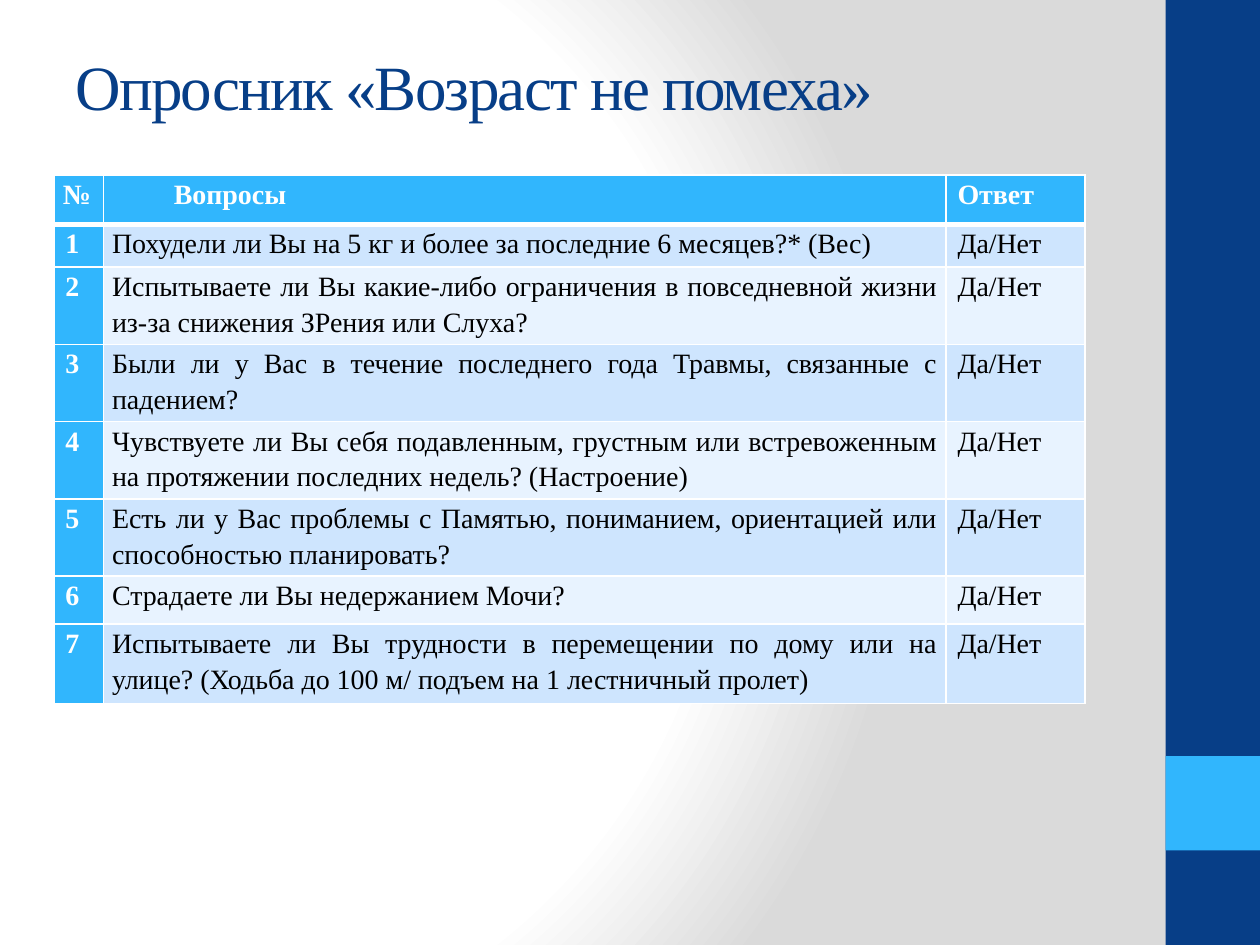
from lxml.etree import SubElement
from pptx import Presentation
from pptx.dml.color import RGBColor
from pptx.enum.shapes import MSO_SHAPE
from pptx.enum.text import MSO_ANCHOR, PP_ALIGN
from pptx.oxml import parse_xml
from pptx.oxml.ns import nsdecls, qn
from pptx.util import Inches, Pt

NAVY = RGBColor(0x07, 0x3E, 0x87)
SKY = RGBColor(0x31, 0xB6, 0xFD)
BAND_DARK = RGBColor(0xCE, 0xE5, 0xFE)
BAND_LIGHT = RGBColor(0xE8, 0xF3, 0xFF)
GREY = RGBColor(0xDA, 0xDA, 0xDA)
WHITE = RGBColor(0xFF, 0xFF, 0xFF)
BLACK = RGBColor(0, 0, 0)

HEADER = ["№", "Вопросы", "Ответ"]
ANSWER = "Да/Нет"
QUESTIONS = [
    "Похудели ли Вы на 5 кг и более за последние 6 месяцев?* (Вес)",
    "Испытываете ли Вы какие-либо ограничения в повседневной жизни "
    "из-за снижения ЗРения или Слуха?",
    "Были ли у Вас в течение последнего года Травмы, связанные с падением?",
    "Чувствуете ли Вы себя подавленным, грустным или встревоженным "
    "на протяжении последних недель? (Настроение)",
    "Есть ли у Вас проблемы с Памятью, пониманием, ориентацией "
    "или способностью планировать?",
    "Страдаете ли Вы недержанием Мочи?",
    "Испытываете ли Вы трудности в перемещении по дому или на улице? "
    "(Ходьба до 100 м/ подъем на 1 лестничный пролет)",
]
COL_WIDTHS = [0.39, 6.69, 1.1]
ROW_HEIGHTS = [0.39, 0.34] + [0.57] * 4 + [0.38, 0.63]


class SlideBuilder:
    font = "Times New Roman"

    def __init__(self, slide):
        self.s = slide

    def background(self, stops):
        gs = "".join(f'<a:gs pos="{pos * 1000}"><a:srgbClr val="{color}"/></a:gs>'
                     for pos, color in stops)
        bg = parse_xml(
            f'<p:bg {nsdecls("p", "a")}><p:bgPr><a:gradFill rotWithShape="1">'
            f'<a:gsLst>{gs}</a:gsLst><a:path path="circle">'
            '<a:fillToRect l="20000" t="50000" r="100000" b="50000"/></a:path>'
            '</a:gradFill><a:effectLst/></p:bgPr></p:bg>')
        self.s.element.cSld.insert(0, bg)

    def rect(self, x, y, w, h, color):
        sp = self.s.shapes.add_shape(MSO_SHAPE.RECTANGLE, Inches(x), Inches(y),
                                     Inches(w), Inches(h))
        sp.shadow.inherit = False
        sp.fill.solid()
        sp.fill.fore_color.rgb = color
        sp.line.fill.background()

    def style(self, p, size, color, bold=False):
        r = p.runs[0]
        r.font.name = self.font
        r.font.size = Pt(size)
        r.font.bold = bold
        r.font.color.rgb = color
        return r

    def title(self, x, y, w, h, text):
        tf = self.s.shapes.add_textbox(Inches(x), Inches(y),
                                       Inches(w), Inches(h)).text_frame
        tf.word_wrap = True
        tf.vertical_anchor = MSO_ANCHOR.MIDDLE
        tf.text = text
        r = self.style(tf.paragraphs[0], 36, NAVY)
        r.font._element.set("spc", "-100")

    def borders(self, cell, top=1, bottom=1):
        tcPr = cell._tc.get_or_add_tcPr()
        for side, width in (("L", 1), ("R", 1), ("T", top), ("B", bottom)):
            ln = SubElement(tcPr, qn(f"a:ln{side}"), w=str(Pt(width)))
            fill = SubElement(ln, qn("a:solidFill"))
            SubElement(fill, qn("a:srgbClr"), val=str(WHITE))

    def cell(self, cell, text, fill, accent, align, indent, **edges):
        self.borders(cell, **edges)
        cell.fill.solid()
        cell.fill.fore_color.rgb = fill
        cell.margin_left = cell.margin_right = Inches(0.07)
        cell.margin_top = cell.margin_bottom = 0
        p = cell.text_frame.paragraphs[0]
        p.text = text
        p.alignment = align
        p.line_spacing = 1.15
        pPr = p._p.get_or_add_pPr()
        pPr.set("marL", "0")
        pPr.set("indent", str(Inches(indent)))
        self.style(p, 16, WHITE if accent else BLACK, accent)

    def table(self, x, y, rows):
        tbl = self.s.shapes.add_table(
            len(rows), len(COL_WIDTHS), Inches(x), Inches(y),
            Inches(sum(COL_WIDTHS)), Inches(sum(ROW_HEIGHTS))).table
        for col, width in zip(tbl.columns, COL_WIDTHS):
            col.width = Inches(width)
        for i, (row, height) in enumerate(zip(rows, ROW_HEIGHTS)):
            tbl.rows[i].height = Inches(height)
            band = BAND_DARK if i % 2 else BAND_LIGHT
            indents = (0.02, 0, 0.02) if i else (0, 0.49, 0.02)
            for j, text in enumerate(row):
                accent = i == 0 or j == 0
                self.cell(tbl.cell(i, j), text, SKY if accent else band, accent,
                          PP_ALIGN.JUSTIFY if j else PP_ALIGN.LEFT, indents[j],
                          top=3 if i == 1 else 1, bottom=3 if i == 0 else 1)


def main():
    prs = Presentation()
    prs.slide_width, prs.slide_height = Inches(10), Inches(7.5)
    b = SlideBuilder(prs.slides.add_slide(prs.slide_layouts[6]))

    # Background and side band
    b.background([(0, WHITE), (75, WHITE), (100, GREY)])
    b.rect(9.25, 0, 0.75, 7.5, NAVY)
    b.rect(9.25, 6, 0.75, 0.75, SKY)

    # Title
    b.title(0.5, 0.29, 8.33, 0.77, "Опросник «Возраст не помеха»")

    # Questionnaire
    rows = [[str(n), question, ANSWER] for n, question in enumerate(QUESTIONS, 1)]
    b.table(0.43, 1.39, [HEADER] + rows)

    prs.save("out.pptx")


if __name__ == "__main__":
    main()
